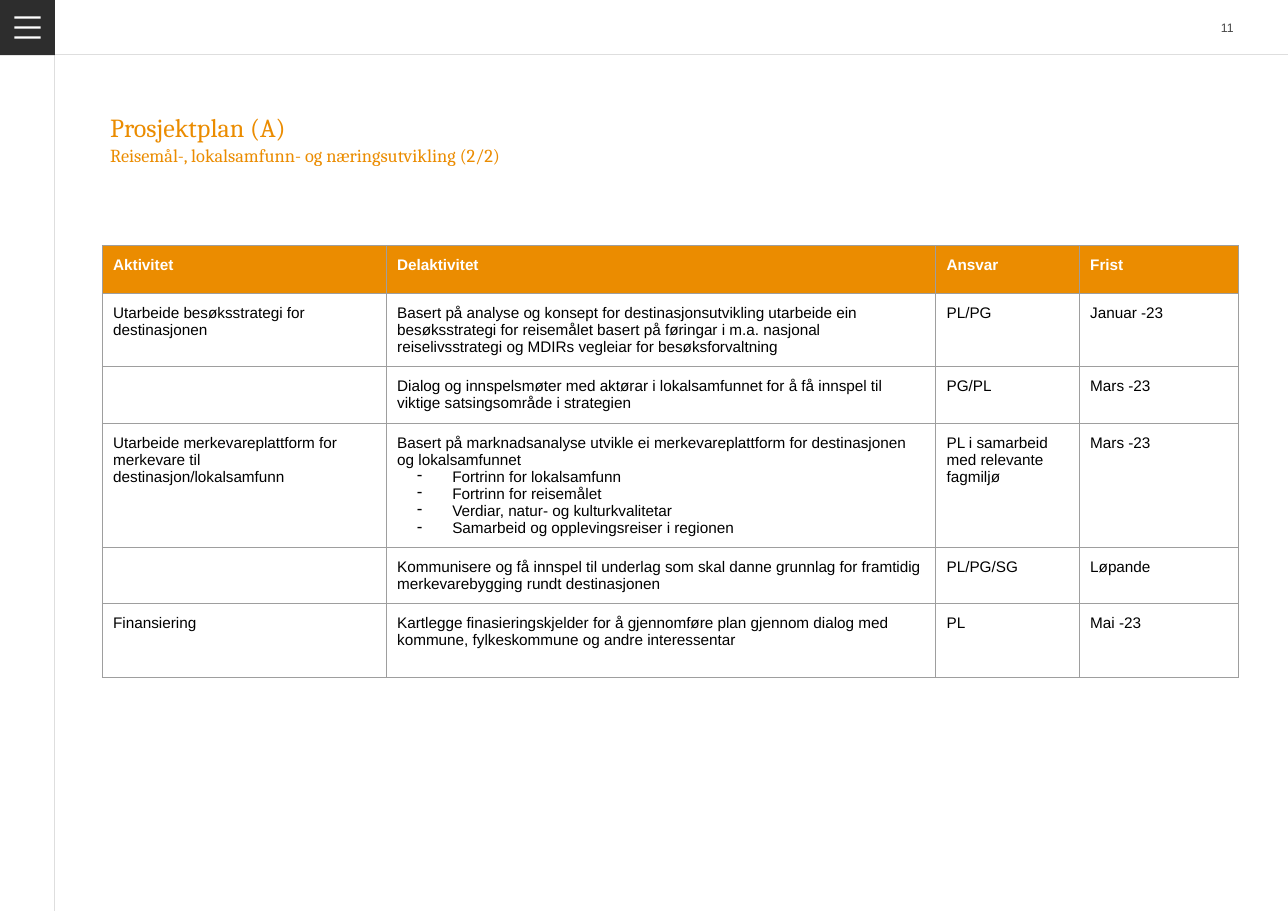
"""Build the project plan slide with its activity table."""
import pptx
import pptx.dml.color
import pptx.enum.shapes
import pptx.enum.text
import pptx.oxml
import pptx.oxml.ns
import pptx.util
from lxml import etree

Cm, Pt = pptx.util.Cm, pptx.util.Pt
SHAPE = pptx.enum.shapes.MSO_SHAPE.RECTANGLE
LINK = pptx.enum.shapes.MSO_CONNECTOR.STRAIGHT
ALIGN, ANCHOR = pptx.enum.text.PP_ALIGN, pptx.enum.text.MSO_ANCHOR
qn = pptx.oxml.ns.qn

WIDE, HIGH, BAR = 29.7, 21, 1.25
ORANGE, DARK, PALE, GREY = "EB8C00", "2D2D2D", "DEDEDE", "9E9E9E"
TITLE = [("Prosjektplan (A)", 17),
         ("Reisemål-, lokalsamfunn- og næringsutvikling (2/2)", 12)]
PAGE = "11"
COLS = [6.55, 12.67, 3.31, 3.66]
ROWS = [
    (1.11, ["Aktivitet", "Delaktivitet", "Ansvar", "Frist"]),
    (1.68, ["Utarbeide besøksstrategi for destinasjonen",
            "Basert på analyse og konsept for destinasjonsutvikling utarbeide "
            "ein besøksstrategi for reisemålet basert på føringar i m.a. "
            "nasjonal reiselivsstrategi og MDIRs vegleiar for "
            "besøksforvaltning", "PL/PG", "Januar -23"]),
    (1.31, ["", "Dialog og innspelsmøter med aktørar i lokalsamfunnet for å få "
            "innspel til viktige satsingsområde i strategien",
            "PG/PL", "Mars -23"]),
    (2.86, ["Utarbeide merkevareplattform for merkevare til "
            "destinasjon/lokalsamfunn",
            "Basert på marknadsanalyse utvikle ei merkevareplattform for "
            "destinasjonen og lokalsamfunnet\n"
            "- Fortrinn for lokalsamfunn\n"
            "- Fortrinn for reisemålet\n"
            "- Verdiar, natur- og kulturkvalitetar\n"
            "- Samarbeid og opplevingsreiser i regionen",
            "PL i samarbeid med relevante fagmiljø", "Mars -23"]),
    (1.29, ["", "Kommunisere og få innspel til underlag som skal danne "
            "grunnlag for framtidig merkevarebygging rundt destinasjonen",
            "PL/PG/SG", "Løpande"]),
    (1.71, ["Finansiering",
            "Kartlegge finasieringskjelder for å gjennomføre plan gjennom "
            "dialog med kommune, fylkeskommune og andre interessentar",
            "PL", "Mai -23"]),
]
HEAD = dict(name="Arial", size=Pt(10), bold=True)
BODY = HEAD | dict(bold=False)
FLUSH = dict(margin_left=0, margin_right=0, margin_top=0, margin_bottom=0,
             word_wrap=True, auto_size=pptx.enum.text.MSO_AUTO_SIZE.NONE)
INSET = dict.fromkeys(
    ["margin_left", "margin_right", "margin_top", "margin_bottom"], Cm(0.25))


def tint(code):
    return pptx.dml.color.RGBColor.from_string(code)


def apply(item, form):
    for key, value in form.items():
        setattr(item, key, value)


def box(left, top, width, height):
    return dict(left=Cm(left), top=Cm(top), width=Cm(width), height=Cm(height))


def paint(shape, code):
    shape.shadow.inherit = False
    shape.fill.solid()
    shape.fill.fore_color.rgb = tint(code)
    shape.line.fill.background()


def write(para, text, font, code):
    para.text = text
    apply(para.font, font)
    para.font.color.rgb = tint(code)


def rule(slide, *ends):
    line = slide.shapes.add_connector(LINK, *map(Cm, ends))
    line.line.width = Pt(0.75)
    line.line.color.rgb = tint(PALE)
    etree.SubElement(line._element.spPr, qn("a:effectLst"))


def dash(para):
    props = para._p.get_or_add_pPr()
    props.set("marL", str(Cm(1.27)))
    props.set("indent", str(-Cm(0.81)))
    etree.SubElement(props, qn("a:buChar")).set("char", "-")


def edge(cell):
    props = cell._tc.get_or_add_tcPr()
    for spot, side in enumerate(["lnL", "lnR", "lnT", "lnB"]):
        line = etree.Element(qn("a:" + side), w=str(Pt(0.75)))
        fill = etree.SubElement(line, qn("a:solidFill"))
        etree.SubElement(fill, qn("a:srgbClr")).set("val", GREY)
        props.insert(spot, line)


def frame(slide):
    rule(slide, 0, BAR, WIDE, BAR)
    rule(slide, BAR, 0, BAR, HIGH)
    paint(slide.shapes.add_shape(SHAPE, **box(0, 0, BAR + 0.02, BAR + 0.02)),
          DARK)
    icon = None
    for step in range(3):
        top = 0.38 + 0.23 * step
        low = top + 0.05
        if icon is None:
            icon = slide.shapes.build_freeform(Cm(0.33), Cm(top))
        else:
            icon.move_to(Cm(0.33), Cm(top))
        ring = [(0.33, low), (0.94, low), (0.94, top)]
        icon.add_line_segments([(Cm(x), Cm(y)) for x, y in ring])
    paint(icon.convert_to_shape(), "FFFFFF")
    text = slide.shapes.add_textbox(**box(27.18, 0, BAR + 0.02, BAR + 0.02))
    apply(text.text_frame, FLUSH | dict(vertical_anchor=ANCHOR.MIDDLE))
    para = text.text_frame.paragraphs[0]
    write(para, PAGE, dict(name="Arial", size=Pt(8)), "464646")
    para.alignment = ALIGN.RIGHT


def head(slide):
    title = slide.shapes.title
    apply(title, box(2.54, 2.54, 25.9, 1.47))
    text = title.text_frame
    apply(text, FLUSH | dict(vertical_anchor=ANCHOR.TOP))
    text.text = "\n".join(line for line, _ in TITLE)
    for para, (line, size) in zip(text.paragraphs, TITLE):
        write(para, line, dict(name="Cambria", size=Pt(size)), ORANGE)
        apply(para, dict(line_spacing=1.05, alignment=ALIGN.LEFT))


def fill(cell, text, first):
    apply(cell, INSET)
    if first:
        cell.fill.solid()
        cell.fill.fore_color.rgb = tint(ORANGE)
    else:
        cell.fill.background()
    edge(cell)
    cell.text_frame.text = text
    for para, line in zip(cell.text_frame.paragraphs, text.split("\n")):
        write(para, line.removeprefix("- "), HEAD if first else BODY,
              "FFFFFF" if first else "000000")
        if line.startswith("- "):
            dash(para)


def plan(slide):
    tall = sum(height for height, _ in ROWS)
    table = slide.shapes.add_table(
        len(ROWS), len(COLS), **box(2.36, 5.66, sum(COLS), tall)).table
    apply(table, dict(first_row=False, horz_banding=False))
    for col, width in zip(table.columns, COLS):
        col.width = Cm(width)
    for at, (row, (height, texts)) in enumerate(zip(table.rows, ROWS)):
        row.height = Cm(height)
        for cell, text in zip(row.cells, texts):
            fill(cell, text, at == 0)


def main():
    deck = pptx.Presentation()
    apply(deck, dict(slide_width=Cm(WIDE), slide_height=Cm(HIGH)))
    slide = deck.slides.add_slide(deck.slide_layouts[5])
    frame(slide)
    head(slide)
    plan(slide)
    deck.save("out.pptx")


if __name__ == "__main__":
    main()
